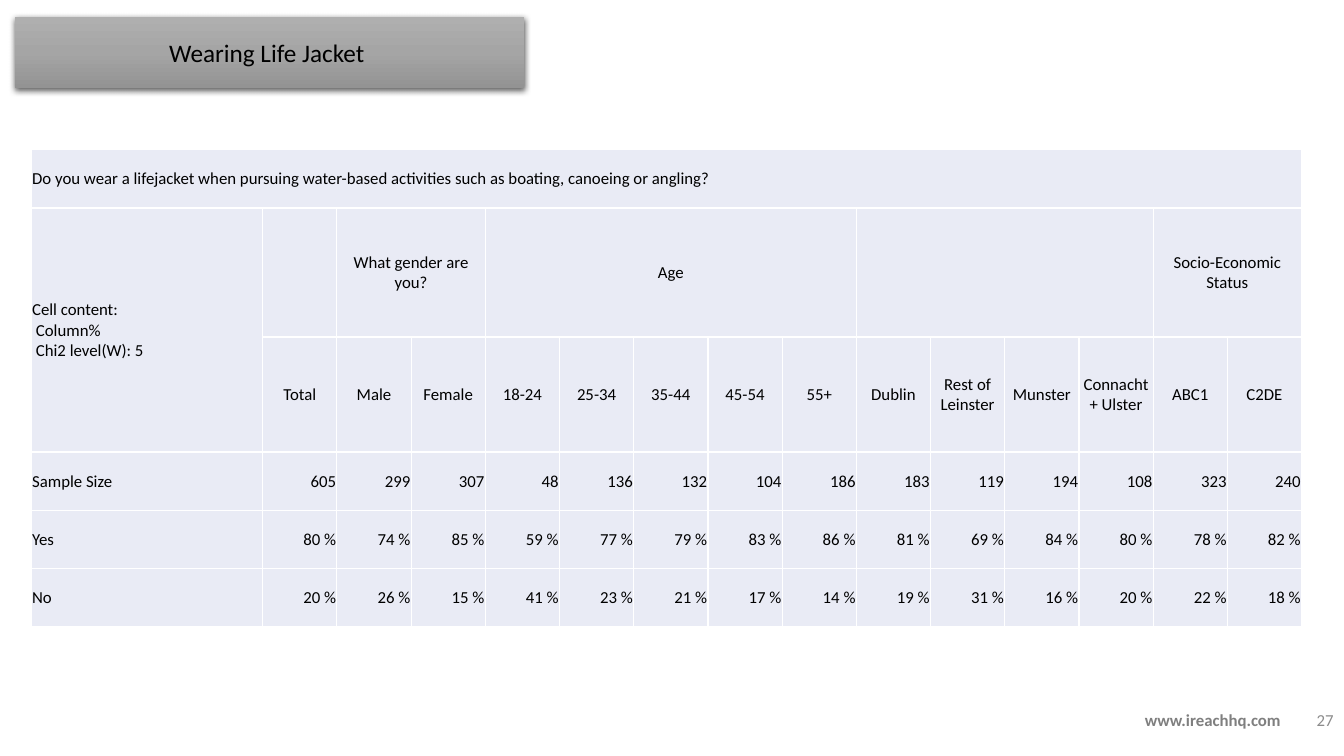
from lxml import etree
from pptx import Presentation
from pptx.dml.color import RGBColor
from pptx.enum.text import MSO_ANCHOR as Anchor, MSO_AUTO_SIZE as AutoSize, PP_ALIGN as Align
from pptx.oxml.ns import nsdecls
from pptx.util import Cm, Pt

TITLE = "Wearing Life Jacket "
QUESTION = "Do you wear a lifejacket when pursuing water-based activities such as boating, canoeing or angling?"
CELL_NOTE = ["Cell content:", " Column%", " Chi2 level(W): 5"]
GROUPS = [
    ("", ["Total"]),
    ("What gender are you?", ["Male", "Female"]),
    ("Age", ["18-24", "25-34", "35-44", "45-54", "55+"]),
    ("", ["Dublin", "Rest of Leinster", "Munster", "Connacht + Ulster"]),
    ("Socio-Economic Status", ["ABC1", "C2DE"]),
]
RESULTS = [
    ("Sample Size", "{}", [605, 299, 307, 48, 136, 132, 104, 186, 183, 119, 194, 108, 323, 240]),
    ("Yes", "{} %", [80, 74, 85, 59, 77, 79, 83, 86, 81, 69, 84, 80, 78, 82]),
    ("No", "{} %", [20, 26, 15, 41, 23, 21, 17, 14, 19, 31, 16, 20, 22, 18]),
]
WEBSITE = "www.ireachhq.com"
PAGE = "27"

COLORS = {
    "text": "000000", "cell": "E9EBF5", "website": "7F7F7F", "page": "8C8C8C",
    "top": "AFAFAF", "middle": "A5A5A5", "bottom": "939393", "shadow": "000000",
}
FONT = "Calibri"
LABEL_WIDTH, VALUE_WIDTH = 5.83, 1.87
ROW_HEIGHTS = [1.47, 3.25, 2.9, 1.47, 1.47, 1.47]
TABLE_LEFT, TABLE_TOP = 0.79, 3.77
TITLE_BOX = (0.38, 0.43, 12.83, 1.78)
WEBSITE_BOX = (28.6, 17.68, 4.75, 0.97)
PAGE_BOX = (26.24, 17.63, 7.62, 1.02)

BUTTON_STYLE = [
    '<a:prstGeom {ns} prst="roundRect"><a:avLst/></a:prstGeom>',
    '<a:gradFill {ns} rotWithShape="1"><a:gsLst>'
    '<a:gs pos="0"><a:srgbClr val="{top}"/></a:gs>'
    '<a:gs pos="50000"><a:srgbClr val="{middle}"/></a:gs>'
    '<a:gs pos="100000"><a:srgbClr val="{bottom}"/></a:gs>'
    '</a:gsLst><a:lin ang="5400000" scaled="0"/></a:gradFill>',
    '<a:ln {ns}><a:noFill/></a:ln>',
    '<a:effectLst {ns}><a:outerShdw blurRad="57150" dist="19050" dir="5400000" '
    'algn="ctr" rotWithShape="0"><a:srgbClr val="{shadow}"><a:alpha val="63000"/>'
    '</a:srgbClr></a:outerShdw></a:effectLst>',
]


def write(frame, lines, align, color, size=12, bold=False):
    frame.word_wrap = True
    frame.vertical_anchor = Anchor.MIDDLE
    paragraph = frame.paragraphs[0]
    paragraph.alignment = align
    for index, line in enumerate(lines):
        if index:
            paragraph.add_line_break()
        run = paragraph.add_run()
        run.text = line
        run.font.name = FONT
        run.font.size = Pt(size)
        run.font.bold = bold
        run.font.color.rgb = RGBColor.from_string(COLORS[color])
    return paragraph


def add_title(slide):
    title = slide.shapes.title
    title.left, title.top, title.width, title.height = map(Cm, TITLE_BOX)
    for part in BUTTON_STYLE:
        title.element.spPr.append(etree.fromstring(part.format(ns=nsdecls("a"), **COLORS)))
    title.text_frame.auto_size = AutoSize.NONE
    write(title.text_frame, [TITLE], Align.CENTER, "text", size=18)


def fill_cell(cell, lines, align):
    cell.margin_left = cell.margin_top = cell.margin_right = Cm(0.02)
    cell.margin_bottom = 0
    cell.vertical_anchor = Anchor.MIDDLE
    write(cell.text_frame, lines, align, "text")


def add_results(slide):
    widths = [LABEL_WIDTH] + [VALUE_WIDTH] * sum(len(names) for _, names in GROUPS)
    table = slide.shapes.add_table(
        len(ROW_HEIGHTS), len(widths), Cm(TABLE_LEFT), Cm(TABLE_TOP),
        Cm(sum(widths)), Cm(sum(ROW_HEIGHTS))).table
    table.first_row = table.horz_banding = False
    for column, width in zip(table.columns, widths):
        column.width = Cm(width)
    for row, height in zip(table.rows, ROW_HEIGHTS):
        row.height = Cm(height)
    for cell in table.iter_cells():
        cell.fill.solid()
        cell.fill.fore_color.rgb = RGBColor.from_string(COLORS["cell"])

    table.cell(0, 0).merge(table.cell(0, len(widths) - 1))
    fill_cell(table.cell(0, 0), [QUESTION], Align.LEFT)
    table.cell(1, 0).merge(table.cell(2, 0))
    fill_cell(table.cell(1, 0), CELL_NOTE, Align.LEFT)

    first = 1
    for heading, names in GROUPS:
        group = table.cell(1, first)
        if len(names) > 1:
            group.merge(table.cell(1, first + len(names) - 1))
        if heading:
            fill_cell(group, [heading], Align.CENTER)
        for column, name in enumerate(names, first):
            fill_cell(table.cell(2, column), [name], Align.CENTER)
        first += len(names)

    for row, (answer, pattern, values) in enumerate(RESULTS, 3):
        fill_cell(table.cell(row, 0), [answer], Align.LEFT)
        for column, value in enumerate(values, 1):
            fill_cell(table.cell(row, column), [pattern.format(value)], Align.RIGHT)


def add_footer(slide):
    website = slide.shapes.add_textbox(*map(Cm, WEBSITE_BOX))
    write(website.text_frame, [WEBSITE], Align.LEFT, "website", bold=True).line_spacing = 0.9
    page = slide.shapes.add_textbox(*map(Cm, PAGE_BOX))
    write(page.text_frame, [PAGE], Align.RIGHT, "page")


def main():
    deck = Presentation()
    deck.slide_width, deck.slide_height = Cm(33.87), Cm(19.05)
    slide = deck.slides.add_slide(deck.slide_layouts[5])
    add_footer(slide)
    add_title(slide)
    add_results(slide)
    deck.save("out.pptx")


if __name__ == "__main__":
    main()
